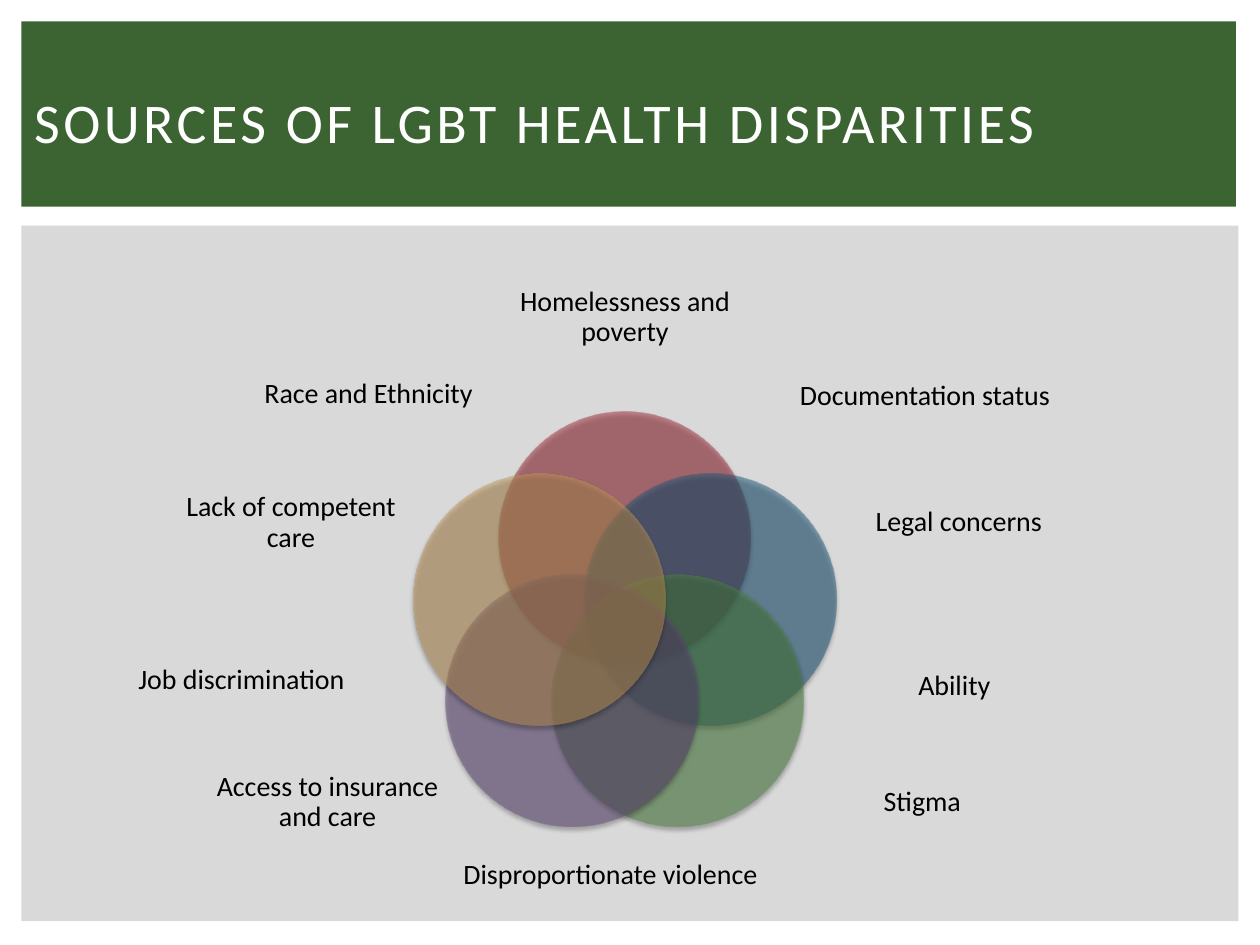
from dataclasses import dataclass
from math import cos, radians, sin

from lxml import etree
from pptx import Presentation
from pptx.dml.color import RGBColor
from pptx.enum.shapes import MSO_SHAPE
from pptx.enum.text import MSO_ANCHOR, MSO_AUTO_SIZE, PP_ALIGN
from pptx.oxml import parse_xml
from pptx.util import Inches, Pt

RECT, OVAL = MSO_SHAPE.RECTANGLE, MSO_SHAPE.OVAL
LEFT, CENTER = PP_ALIGN.LEFT, PP_ALIGN.CENTER
TOP, MIDDLE = MSO_ANCHOR.TOP, MSO_ANCHOR.MIDDLE
NO_FIT, GROW = MSO_AUTO_SIZE.NONE, MSO_AUTO_SIZE.SHAPE_TO_FIT_TEXT
FONT = "Calibri"
NS = "http://schemas.openxmlformats.org/drawingml/2006/main"

# Grid of 100 columns by 75 rows on the slide
COLS, ROWS = 100, 75
WIDTH, HEIGHT = Inches(10), Inches(7.5)

# Ring of circles, in grid units
HUB_X, HUB_Y, RING, DIAMETER = 49.6, 49.8, 7.15, 20


@dataclass
class Box:
    col: float
    row: float
    cols: float
    rows: float

    def emu(self) -> tuple:
        return (int(self.col * WIDTH / COLS), int(self.row * HEIGHT / ROWS),
                int(self.cols * WIDTH / COLS), int(self.rows * HEIGHT / ROWS))


@dataclass
class Petal:
    color: str
    rim: str
    text: str
    label: Box


@dataclass
class Note:
    text: str
    box: Box


PETALS = [
    Petal("9F2936", "942632", "Homelessness and poverty", Box(39.2, 19.2, 20.8, 12)),
    Petal("1B587C", "195274", "Legal concerns", Box(66.8, 35, 18.6, 13)),
    Petal("4E8542", "497C3D", "Stigma", Box(63.9, 57.2, 18.6, 13)),
    Petal("604878", "594370", "Access to insurance and care", Box(16.7, 57.2, 18.6, 13)),
    Petal("C19859", "B48E53", "Lack of competent care", Box(13.8, 35, 18.6, 13)),
]
NOTES = [
    Note("Race and Ethnicity", Box(20, 29.3, 20.8, 3.7)),
    Note("Documentation status", Box(62.5, 29.5, 25.8, 3.7)),
    Note("Ability", Box(71.9, 52.5, 16.7, 3.7)),
    Note("Job discrimination", Box(10, 52, 19.3, 3.7)),
    Note("Disproportionate violence", Box(35.8, 67.5, 28.3, 3.7)),
]


def rgb(color: str) -> RGBColor:
    return RGBColor.from_string(color)


def add_panel(s, box: Box, color: str) -> None:
    sp = s.shapes.add_shape(RECT, *box.emu())
    sp.shadow.inherit = False
    sp.fill.solid()
    sp.fill.fore_color.rgb = rgb(color)
    sp.line.fill.background()


def write(tf, text: str, *, size: float = 16, color: str = "000000", align=LEFT,
          anchor=TOP, fit=NO_FIT, leading: float = 1, margin=None,
          spacing: float = 0) -> None:
    tf.word_wrap = True
    tf.auto_size = fit
    tf.vertical_anchor = anchor
    if margin is not None:
        tf.margin_left = tf.margin_right = tf.margin_top = tf.margin_bottom = margin
    p = tf.paragraphs[0]
    p.alignment, p.line_spacing = align, leading
    r = p.add_run()
    r.text = text
    r.font.name, r.font.size = FONT, Pt(size)
    r.font.color.rgb = rgb(color)
    if spacing:
        r.font._element.set("spc", str(int(spacing * 100)))


def add_label(s, box: Box, text: str, **fmt) -> None:
    write(s.shapes.add_textbox(*box.emu()).text_frame, text, **fmt)


def add_petal(s, petal: Petal, angle: float) -> None:
    x = HUB_X + RING * sin(radians(angle)) - DIAMETER / 2
    y = HUB_Y - RING * cos(radians(angle)) - DIAMETER / 2
    sp = s.shapes.add_shape(OVAL, *Box(x, y, DIAMETER, DIAMETER).emu())
    sp.line.fill.background()
    stops = "".join(
        f'<a:gs pos="{pos}000"><a:srgbClr val="{color}"><a:alpha val="50000"/></a:srgbClr></a:gs>'
        for pos, color in ((0, petal.color), (90, petal.color), (100, petal.rim)))
    fill = parse_xml(
        f'<a:gradFill xmlns:a="{NS}" rotWithShape="1"><a:gsLst>{stops}</a:gsLst><a:path path="circle">'
        '<a:fillToRect l="100000" t="100000" r="100000" b="100000"/></a:path></a:gradFill>')
    spPr = sp._element.spPr
    spPr.find(f"{{{NS}}}prstGeom").addnext(fill)
    # Soft shadow straight below
    effects = etree.SubElement(spPr, f"{{{NS}}}effectLst")
    effects.append(parse_xml(
        f'<a:outerShdw xmlns:a="{NS}" blurRad="{Pt(2.5)}" dist="{Pt(2)}" dir="5400000" rotWithShape="0">'
        '<a:srgbClr val="000000"><a:alpha val="50000"/></a:srgbClr></a:outerShdw>'))


def main() -> None:
    prs = Presentation()
    prs.slide_width, prs.slide_height = WIDTH, HEIGHT
    s = prs.slides.add_slide(prs.slide_layouts[5])

    # Background panels
    add_panel(s, Box(1.7, 17.9, 96.6, 55.2), "D9D9D9")
    add_panel(s, Box(1.7, 1.7, 96.4, 14.7), "3B6432")

    # Title, brought in front of the panels
    title = s.shapes.title
    title.left, title.top, title.width, title.height = Box(1.7, 2.5, 85.8, 14.2).emu()
    write(title.text_frame, "SOURCES OF LGBT HEALTH DISPARITIES", size=32,
          color="FFFFFF", anchor=MIDDLE, spacing=2)
    s.shapes._spTree.append(title._element)

    # Overlapping circles with their labels
    for i, petal in enumerate(PETALS):
        add_petal(s, petal, i * 360 / len(PETALS))
        add_label(s, petal.label, petal.text, align=CENTER, anchor=MIDDLE,
                  leading=0.9, margin=0)

    # Further sources around the ring
    for note in NOTES:
        add_label(s, note.box, note.text, fit=GROW)

    prs.save("out.pptx")


if __name__ == "__main__":
    main()
